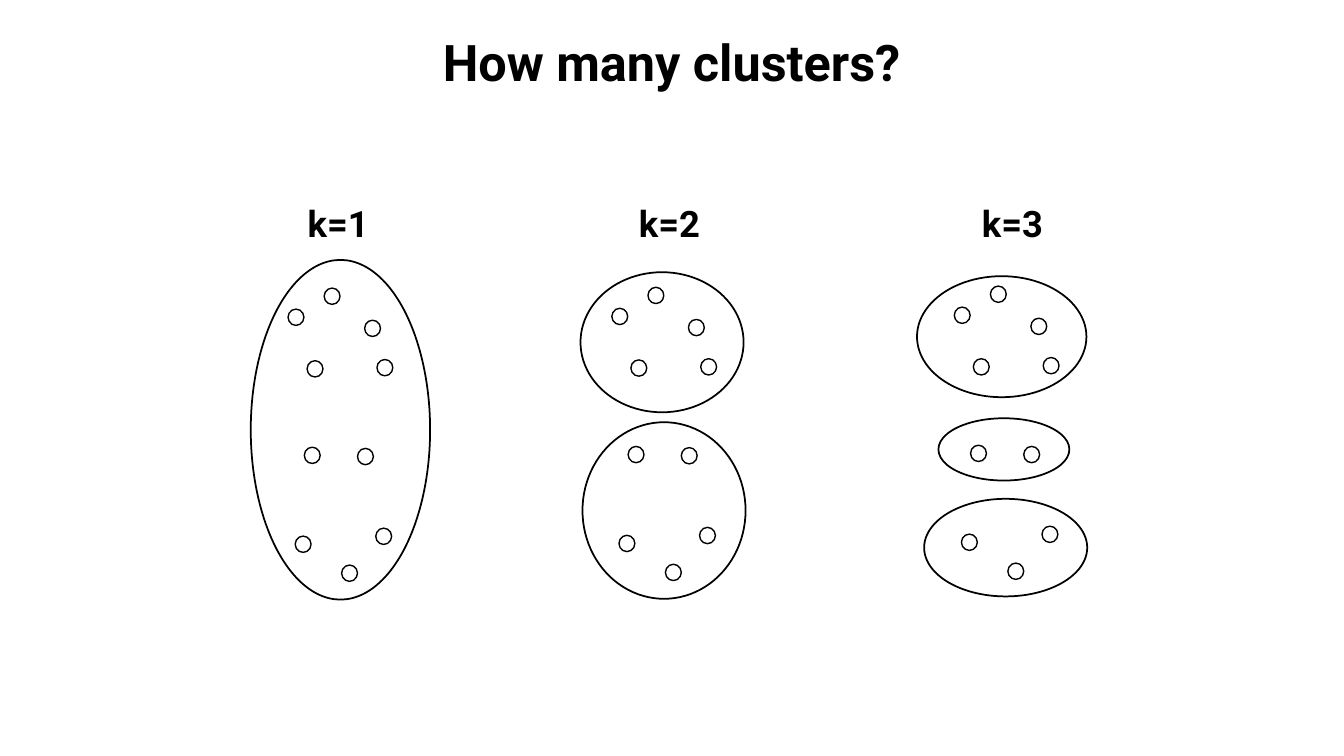
from pptx import Presentation
from pptx import util as u
from pptx.dml.color import RGBColor
from pptx.enum import shapes, text

# Left and top of each dot, in cm from the corner of its panel
DOTS = [(0.41, 4.01), (1.75, 4.04), (1.35, 6.98), (0, 0.53), (0.48, 1.83),
        (0.91, 0), (1.93, 0.81), (2.24, 1.8), (0.18, 6.25), (2.21, 6.05)]

# Label, label left, corner of the dots, cluster outlines (left, top, width, height)
PANELS = [
    ("k=1", 7.32, (7.26, 7.26), [(6.32, 6.55, 4.52, 8.56)]),
    ("k=2", 15.67, (15.42, 7.24), [(14.68, 10.64, 4.11, 4.45),
                                   (14.63, 6.86, 4.11, 3.53)]),
    ("k=3", 24.31, (24.05, 7.21), [(23.65, 10.54, 3.3, 1.57),
                                   (23.29, 12.57, 4.11, 2.46),
                                   (23.11, 6.96, 4.27, 3.05)]),
]


def color(code):
    return RGBColor.from_string(code)


def apply(obj, style):
    for name, value in style.items():
        setattr(obj, name, value)


class Board:
    ink = "000000"
    paper = "FFFFFF"
    face = "Roboto"

    def __init__(self, slide):
        self.slide = slide

    def ring(self, group, box, width):
        oval = group.shapes.add_shape(shapes.MSO_SHAPE.OVAL, *map(u.Cm, box))
        oval.shadow.inherit = False
        oval.fill.solid()
        oval.fill.fore_color.rgb = color(self.paper)
        oval.line.color.rgb = color(self.ink)
        oval.line.width = u.Pt(width)

    def panel(self, corner, rings):
        """Group the cluster outlines with the dots on top of them."""
        group = self.slide.shapes.add_group_shape()
        for box in rings:
            self.ring(group, box, 1.25)
        left, top = corner
        for x, y in DOTS:
            self.ring(group, (left + x, top + y, 0.4, 0.41), 1)

    def label(self, words, box, size, frame, para):
        shape = self.slide.shapes.add_textbox(*map(u.Cm, box))
        area = shape.text_frame
        apply(area, {"vertical_anchor": text.MSO_ANCHOR.MIDDLE, **frame})
        line = area.paragraphs[0]
        apply(line, {"alignment": text.PP_ALIGN.CENTER, **para})
        run = line.add_run()
        run.text = words
        apply(run.font, {"name": self.face, "size": u.Pt(size), "bold": True})
        run.font.color.rgb = color(self.ink)


def main():
    deck = Presentation()
    apply(deck, {"slide_width": u.Cm(33.87), "slide_height": u.Cm(19.05)})
    board = Board(deck.slides.add_slide(deck.slide_layouts[6]))

    fit = {"word_wrap": False, "auto_size": text.MSO_AUTO_SIZE.SHAPE_TO_FIT_TEXT}
    for words, left, corner, rings in PANELS:
        board.panel(corner, rings)
        board.label(words, (left, 5.16, 2.41, 1.14), 26, fit, {"line_spacing": 0.8})

    sides = ("left", "top", "right", "bottom")
    wrap = {"word_wrap": True, **{f"margin_{side}": u.Cm(0.25) for side in sides}}
    board.label("How many clusters?", (4.93, 0.91, 24, 1.45), 36, wrap,
                {"line_spacing": 0.9})
    deck.save("out.pptx")


if __name__ == "__main__":
    main()
